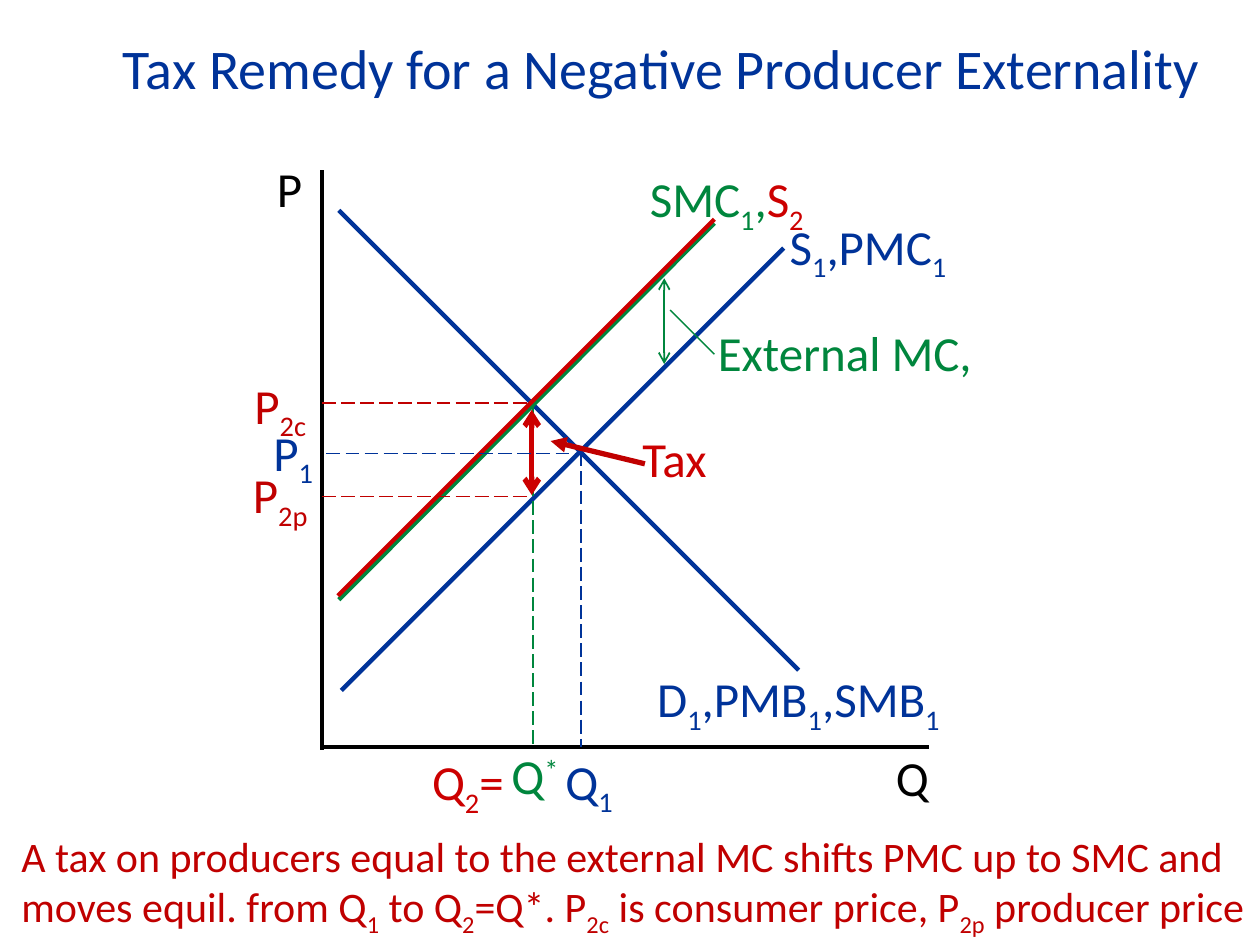
from dataclasses import dataclass
from typing import Optional

from lxml.etree import SubElement
from pptx import Presentation
from pptx.dml.color import RGBColor
from pptx.enum.dml import MSO_LINE_DASH_STYLE as Dash
from pptx.enum.shapes import MSO_CONNECTOR as Connector
from pptx.enum.text import MSO_ANCHOR as Anchor, MSO_AUTO_SIZE as AutoSize, PP_ALIGN as Align
from pptx.oxml.ns import qn
from pptx.util import Cm, Pt

COLOURS = {
    "blue": "003399",
    "black": "000000",
    "green": "00863D",
    "red": "CC0000",
    "dark red": "C00000",
}
FONT = "Calibri"
SUBSCRIPT, SUPERSCRIPT = -25000, 30000
TIGHT = 0.8


@dataclass(frozen=True)
class Term:
    text: str
    baseline: int = 0
    colour: Optional[str] = None


@dataclass(frozen=True)
class Label:
    left: float
    top: float
    width: float
    height: float
    colour: str
    terms: tuple[Term, ...]
    size: int = 28
    spacing: Optional[float] = None
    align: Optional[Align] = None
    anchor: Anchor = Anchor.TOP


@dataclass(frozen=True)
class Stroke:
    start: tuple[float, float]
    end: tuple[float, float]
    colour: str
    weight: float = 2.5
    dashed: bool = False
    head: Optional[str] = None
    tail: Optional[str] = None


def sub(text: str, colour: Optional[str] = None) -> Term:
    return Term(text, SUBSCRIPT, colour)


def rgb(colour: str) -> RGBColor:
    return RGBColor.from_string(COLOURS[colour])


def draw_label(slide, label: Label) -> None:
    box = slide.shapes.add_textbox(
        Cm(label.left), Cm(label.top), Cm(label.width), Cm(label.height))
    frame = box.text_frame
    frame.word_wrap = True
    frame.auto_size = AutoSize.SHAPE_TO_FIT_TEXT
    frame.vertical_anchor = label.anchor
    paragraph = frame.paragraphs[0]
    paragraph.alignment = label.align
    paragraph.line_spacing = label.spacing
    paragraph.font.name = FONT
    paragraph.font.size = Pt(label.size)
    mixed = any(term.colour for term in label.terms)
    if not mixed:
        paragraph.font.color.rgb = rgb(label.colour)
    for term in label.terms:
        run = paragraph.add_run()
        run.text = term.text
        if mixed:
            run.font.color.rgb = rgb(term.colour or label.colour)
        if term.baseline:
            run._r.get_or_add_rPr().set("baseline", str(term.baseline))


def draw_stroke(slide, stroke: Stroke) -> None:
    ends = [Cm(value) for value in (*stroke.start, *stroke.end)]
    connector = slide.shapes.add_connector(Connector.STRAIGHT, *ends)
    connector.line.color.rgb = rgb(stroke.colour)
    connector.line.width = Pt(stroke.weight)
    if stroke.dashed:
        connector.line.dash_style = Dash.LONG_DASH
    outline = connector.line._get_or_add_ln()
    for tag, arrow in (("a:headEnd", stroke.head), ("a:tailEnd", stroke.tail)):
        if arrow:
            SubElement(outline, qn(tag), type=arrow)
    SubElement(connector._element.spPr, qn("a:effectLst"))


AXIS_X, AXIS_Y = 6.49, 15.06
OPTIMUM_X, MARKET_X = 10.75, 11.71
CONSUMER_Y, MARKET_Y, PRODUCER_Y = 8.13, 9.14, 10.01

LABELS = [
    Label(1.78, 0.53, 23.11, 1.63, "blue",
          (Term("Tax Remedy for a Negative Producer Externality"),),
          size=32, align=Align.CENTER, anchor=Anchor.MIDDLE),
    Label(13, 13.36, 6.55, 1.45, "blue",
          (Term("D"), sub("1"), Term(",PMB"), sub("1"), Term(",SMB"), sub("1"))),
    Label(15.67, 4.24, 3.81, 1.45, "blue",
          (Term("S"), sub("1"), Term(",PMC"), sub("1"))),
    Label(12.85, 3.28, 5.23, 1.45, "green",
          (Term("SMC"), sub("1"), Term(","), Term("S", colour="red"), sub("2", "red"))),
    Label(14.22, 6.6, 5.77, 1.24, "green", (Term("External MC,"),), spacing=TIGHT),
    Label(12.7, 8.74, 5.77, 1.24, "red", (Term("Tax"),), spacing=TIGHT),
    Label(17.81, 14.94, 1.3, 1.45, "black", (Term("Q"),)),
    Label(5.33, 3.3, 1.14, 1.24, "black", (Term("P"),), spacing=TIGHT),
    Label(8.46, 15.16, 2.36, 1.24, "red",
          (Term("Q"), sub("2"), Term("=")), spacing=TIGHT),
    Label(10.06, 15.14, 1.91, 1.24, "green",
          (Term("Q"), Term("*", SUPERSCRIPT)), spacing=TIGHT),
    Label(11.15, 15.14, 1.91, 1.24, "blue", (Term("Q"), sub("1")), spacing=TIGHT),
    Label(4.88, 7.57, 1.78, 1.24, "dark red", (Term("P"), sub("2c")), spacing=TIGHT),
    Label(5.26, 8.51, 1.47, 1.24, "blue", (Term("P"), sub("1")), spacing=TIGHT),
    Label(4.85, 9.37, 1.78, 1.24, "dark red", (Term("P"), sub("2p")), spacing=TIGHT),
    Label(0.18, 16.61, 25.68, 2.31, "dark red",
          (Term("A tax on producers equal to the external MC shifts PMC up to SMC "
                "and moves equil. from Q"), sub("1"), Term(" to Q"), sub("2"),
           Term("=Q*. P"), sub("2c"), Term(" is consumer price, P"), sub("2p"),
           Term(" producer price")), size=24),
]

STROKES = [
    Stroke((6.88, 13.92), (15.8, 5), "blue"),
    Stroke((AXIS_X, 3.43), (AXIS_X, 15.11), "black"),
    Stroke((AXIS_X, AXIS_Y), (18.72, AXIS_Y), "black"),
    Stroke((6.83, 4.24), (16.1, 13.51), "blue"),
    Stroke((MARKET_X, 9.12), (MARKET_X, AXIS_Y), "blue", 1, dashed=True),
    Stroke((6.83, 12.09), (14.4, 4.5), "green"),
    Stroke((OPTIMUM_X, 8.18), (OPTIMUM_X, AXIS_Y), "green", 1, dashed=True),
    Stroke((13.39, 5.61), (13.39, 7.34), "green", 1, head="arrow", tail="arrow"),
    Stroke((13.51, 6.25), (14.4, 7.14), "green", 0.75),
    Stroke((6.81, 12.01), (14.4, 4.42), "red"),
    Stroke((10.72, 8.26), (10.72, 9.98), "red", 3, head="arrow", tail="arrow"),
    Stroke((6.58, MARKET_Y), (11.79, MARKET_Y), "blue", 1, dashed=True),
    Stroke((AXIS_X, CONSUMER_Y), (10.72, CONSUMER_Y), "dark red", 1, dashed=True),
    Stroke((13, 9.35), (11.1, 8.89), "dark red", 3, tail="triangle"),
    Stroke((AXIS_X, PRODUCER_Y), (10.72, PRODUCER_Y), "dark red", 1, dashed=True),
]


def main() -> None:
    deck = Presentation()
    deck.slide_width, deck.slide_height = Cm(25.4), Cm(19.05)
    slide = deck.slides.add_slide(deck.slide_layouts[6])
    for label in LABELS:
        draw_label(slide, label)
    for stroke in STROKES:
        draw_stroke(slide, stroke)
    deck.save("out.pptx")


if __name__ == "__main__":
    main()
